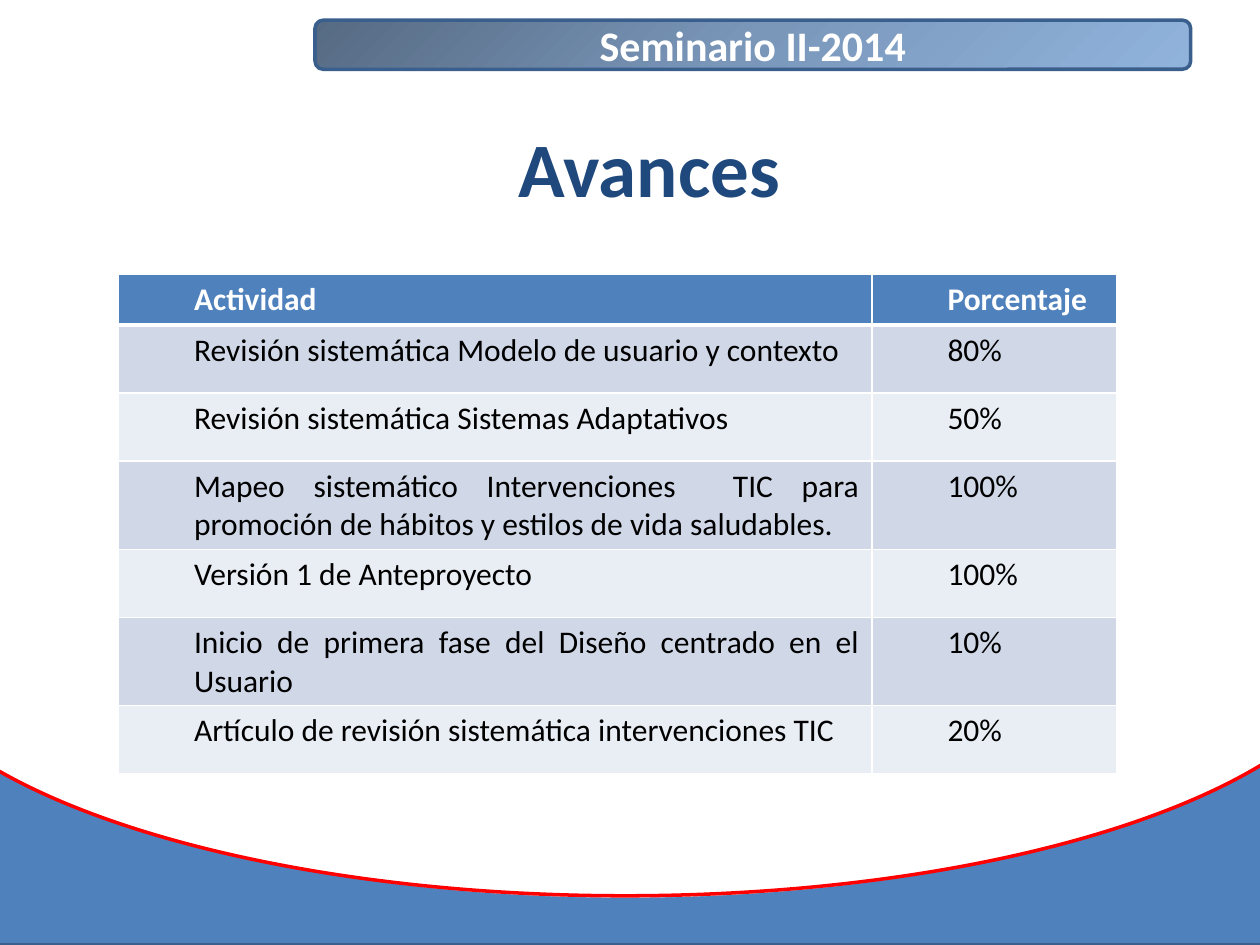
import copy
from dataclasses import dataclass

import lxml.etree
import pptx
import pptx.dml.color
import pptx.enum.shapes
import pptx.enum.text
import pptx.oxml.ns
import pptx.util

SHAPE = pptx.enum.shapes.MSO_SHAPE
ALIGN = pptx.enum.text.PP_ALIGN
MIDDLE = pptx.enum.text.MSO_ANCHOR.MIDDLE
WIDTH, HEIGHT = pptx.util.Inches(10), pptx.util.Inches(7.5)
COLS, ROWS = 100, 75


@dataclass(frozen=True)
class Theme:
    font: str = "Calibri"
    white: str = "FFFFFF"
    black: str = "000000"
    blue: str = "4F81BD"
    outline: str = "3A5F8C"
    navy: str = "1F497D"
    red: str = "FF0000"
    bands: tuple = ("D0D8E8", "E9EDF4")
    gradient: tuple = ((0, "566A83"), (0.5, "7A97BA"), (1, "90B3DC"))
    banner_size: int = 24
    title_size: int = 44
    table_size: int = 18
    line: int = 2
    border: int = 1
    header_border: int = 3


THEME = Theme()

BACKDROP = [
    (SHAPE.RECTANGLE, (-9.4, 38.3, 121.1, 36.7), THEME.blue, THEME.outline),
    (SHAPE.OVAL, (-10.9, 24.2, 121.1, 46.9), THEME.white, THEME.white),
    (SHAPE.OVAL, (-9.4, 28.1, 118, 43), None, THEME.red),
    (SHAPE.RECTANGLE, (-9.4, 0, 121.1, 58.6), THEME.white, THEME.white),
]

ACTIVITIES = [
    ("Actividad", "Porcentaje"),
    ("Revisión sistemática Modelo de usuario y contexto", "80%"),
    ("Revisión sistemática Sistemas Adaptativos", "50%"),
    ("Mapeo sistemático Intervenciones  TIC para promoción de hábitos y "
     "estilos de vida saludables.", "100%"),
    ("Versión 1 de Anteproyecto", "100%"),
    ("Inicio de primera fase del Diseño centrado en el Usuario", "10%"),
    ("Artículo de revisión sistemática intervenciones TIC", "20%"),
]
COLUMN_WIDTHS = (59.8, 19.4)
ROW_HEIGHTS = (4, 5.4, 5.4, 6.6, 5.4, 5.4, 5.4)


def rgb(value):
    return pptx.dml.color.RGBColor.from_string(value)


def across(n):
    return round(WIDTH * n / COLS)


def down(n):
    return round(HEIGHT * n / ROWS)


def box(left, top, width, height):
    return across(left), down(top), across(width), down(height)


def write(tf, text, size, color, bold=True, align=ALIGN.CENTER):
    p = tf.paragraphs[0]
    p.alignment = align
    r = p.add_run()
    r.text = text
    fmt = {"name": THEME.font, "size": pptx.util.Pt(size), "bold": bold}
    for name, value in fmt.items():
        setattr(r.font, name, value)
    r.font.color.rgb = rgb(color)
    return p


def add_figure(s, kind, place, fill, line):
    sp = s.shapes.add_shape(kind, *box(*place))
    sp.shadow.inherit = False
    if fill:
        sp.fill.solid()
        sp.fill.fore_color.rgb = rgb(fill)
    else:
        sp.fill.background()
    sp.line.color.rgb = rgb(line)
    sp.line.width = pptx.util.Pt(THEME.line)
    return sp


def set_gradient(sp, stops):
    sp.fill.gradient()
    sp.fill.gradient_angle = 315
    gs_list = sp._element.spPr.find(".//" + pptx.oxml.ns.qn("a:gsLst"))
    gs_list.append(copy.deepcopy(gs_list[0]))
    for stop, (position, color) in zip(sp.fill.gradient_stops, stops):
        stop.position = position
        stop.color.rgb = rgb(color)


def add_banner(s, text):
    sp = add_figure(s, SHAPE.ROUNDED_RECTANGLE, (25, 1.6, 69.5, 3.9),
                    THEME.blue, THEME.outline)
    set_gradient(sp, THEME.gradient)
    sp.text_frame.vertical_anchor = MIDDLE
    write(sp.text_frame, text, THEME.banner_size, THEME.white)


def add_title(s, text):
    tf = s.shapes.add_textbox(*box(11.7, 7, 79.7, 12.5)).text_frame
    tf.word_wrap = True
    tf.vertical_anchor = MIDDLE
    write(tf, text, THEME.title_size, THEME.navy)


def set_borders(cell, widths):
    tc_pr = cell._tc.get_or_add_tcPr()
    qn = pptx.oxml.ns.qn
    for i, (side, width) in enumerate(widths.items()):
        ln = lxml.etree.Element(qn("a:" + side), w=str(pptx.util.Pt(width)))
        fill = lxml.etree.SubElement(ln, qn("a:solidFill"))
        lxml.etree.SubElement(fill, qn("a:srgbClr"), val=THEME.white)
        tc_pr.insert(i, ln)


def fill_cell(cell, text, row):
    header = row == 0
    cell.fill.solid()
    cell.fill.fore_color.rgb = rgb(
        THEME.blue if header else THEME.bands[(row - 1) % 2])
    p = write(cell.text_frame, text, THEME.table_size,
              THEME.white if header else THEME.black, header, ALIGN.JUSTIFY)
    p._p.get_or_add_pPr().set("marL", str(across(5)))
    set_borders(cell, {
        "lnL": THEME.border,
        "lnR": THEME.border,
        "lnT": THEME.header_border if row == 1 else THEME.border,
        "lnB": THEME.header_border if header else THEME.border,
    })


def add_activity_table(s):
    place = box(9.4, 21.8, sum(COLUMN_WIDTHS), sum(ROW_HEIGHTS))
    table = s.shapes.add_table(len(ACTIVITIES), len(COLUMN_WIDTHS), *place).table
    for column, width in zip(table.columns, COLUMN_WIDTHS):
        column.width = across(width)
    for i, (row, height) in enumerate(zip(table.rows, ROW_HEIGHTS)):
        row.height = down(height)
        for cell, text in zip(row.cells, ACTIVITIES[i]):
            fill_cell(cell, text, i)


def main():
    prs = pptx.Presentation()
    prs.slide_width, prs.slide_height = WIDTH, HEIGHT
    s = prs.slides.add_slide(prs.slide_layouts[6])
    for figure in BACKDROP:
        add_figure(s, *figure)
    add_banner(s, "Seminario II-2014")
    add_title(s, "Avances")
    add_activity_table(s)
    prs.save("out.pptx")


if __name__ == "__main__":
    main()
